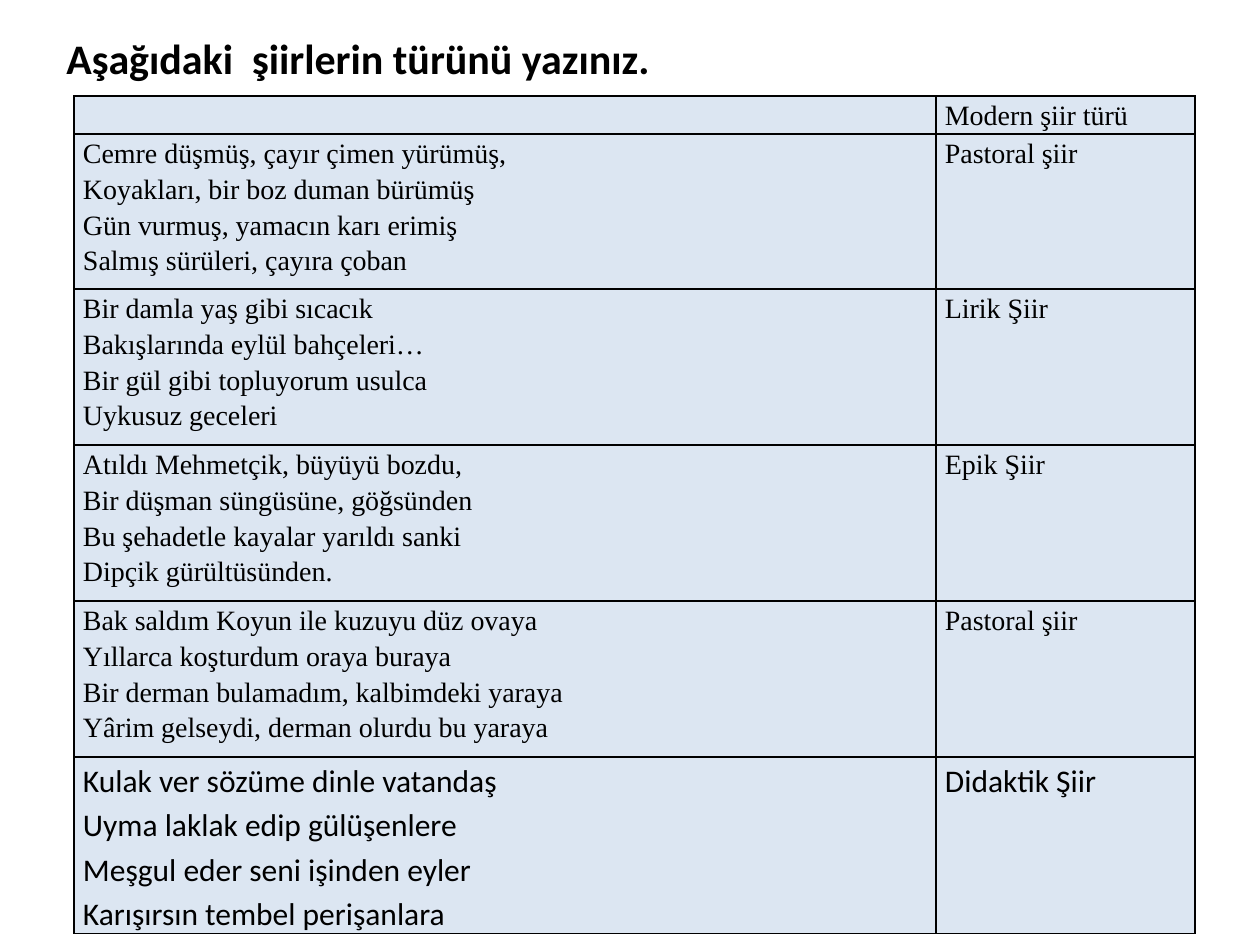
from lxml.etree import SubElement
from pptx import Presentation
from pptx.dml.color import RGBColor
from pptx.enum.text import MSO_AUTO_SIZE as AutoSize
from pptx.oxml import parse_xml
from pptx.oxml.ns import nsdecls, qn
from pptx.util import Pt

PX_PER_INCH = 126
COLORS = {"text": "000000", "border": "000000", "cell": "DCE6F2"}
SERIF = {"name": "Times New Roman", "size": Pt(16), "bold": False}
SANS = {"name": "Calibri", "size": Pt(18), "bold": False}
TITLE = {"name": "Calibri", "size": Pt(24), "bold": True}

COLUMN_WIDTHS = [862, 259]
# Each row: height, poem lines, poem type, font; a vertical tab breaks a line.
ROWS = [
    (38, [""], "Modern şiir türü", SERIF),
    (155, ["Cemre düşmüş, çayır çimen yürümüş,",
           "Koyakları, bir boz duman bürümüş",
           "Gün vurmuş, yamacın karı erimiş",
           "Salmış sürüleri, çayıra çoban"], "Pastoral şiir", SERIF),
    (156, ["Bir damla yaş gibi sıcacık",
           "Bakışlarında eylül bahçeleri…",
           "Bir gül gibi topluyorum usulca",
           "Uykusuz geceleri"], "Lirik Şiir", SERIF),
    (156, ["Atıldı Mehmetçik, büyüyü bozdu,",
           "Bir düşman süngüsüne, göğsünden",
           "Bu şehadetle kayalar yarıldı sanki",
           "Dipçik gürültüsünden."], "Epik Şiir", SERIF),
    (156, ["Bak saldım Koyun ile kuzuyu düz ovaya",
           "Yıllarca koşturdum oraya buraya",
           "Bir derman bulamadım, kalbimdeki yaraya",
           "Yârim gelseydi, derman olurdu bu yaraya"], "Pastoral şiir", SERIF),
    (159, ["Kulak ver sözüme dinle vatandaş\v"
           "Uyma laklak edip gülüşenlere\v"
           "Meşgul eder seni işinden eyler\v"
           "Karışırsın tembel perişanlara"], "Didaktik Şiir", SANS),
]


def px(value):
    return round(value * 914400 / PX_PER_INCH)


def set_all(target, values):
    for name, value in values.items():
        setattr(target, name, value)


class SlideBuilder:
    def __init__(self, slide):
        self.slide = slide

    def fill_text(self, frame, lines, font, line_spacing=None):
        for index, line in enumerate(lines):
            paragraph = frame.add_paragraph() if index else frame.paragraphs[0]
            paragraph.text = line
            paragraph.line_spacing = line_spacing
            for run in paragraph.runs:
                set_all(run.font, font)
                run.font.color.rgb = RGBColor.from_string(COLORS["text"])
            if not line:
                # The end mark's size sets the height of an empty line.
                SubElement(paragraph._p, qn("a:endParaRPr"),
                           sz=str(int(font["size"].pt * 100)))

    def text(self, left, top, width, height, line, font):
        box = self.slide.shapes.add_textbox(*map(px, (left, top, width, height)))
        set_all(box.text_frame, {"word_wrap": True,
                                 "auto_size": AutoSize.SHAPE_TO_FIT_TEXT})
        self.fill_text(box.text_frame, [line], font)

    def border(self, cell):
        properties = cell._tc.get_or_add_tcPr()
        for index, side in enumerate("LRTB"):
            properties.insert(index, parse_xml(
                f'<a:ln{side} {nsdecls("a")} w="{Pt(1)}"><a:solidFill>'
                f'<a:srgbClr val="{COLORS["border"]}"/></a:solidFill></a:ln{side}>'))

    def cell(self, cell, lines, font):
        set_all(cell, {"margin_left": px(9), "margin_right": px(9),
                       "margin_top": 0, "margin_bottom": 0})
        cell.fill.solid()
        cell.fill.fore_color.rgb = RGBColor.from_string(COLORS["cell"])
        self.border(cell)
        self.fill_text(cell.text_frame, lines, font, line_spacing=1.15)

    def table(self, left, top, widths, rows):
        height = sum(row[0] for row in rows)
        table = self.slide.shapes.add_table(
            len(rows), len(widths),
            *map(px, (left, top, sum(widths), height))).table
        set_all(table, {"first_row": False, "horz_banding": False})
        for column, width in zip(table.columns, widths):
            column.width = px(width)
        for index, (row_height, poem, kind, font) in enumerate(rows):
            table.rows[index].height = px(row_height)
            self.cell(table.cell(index, 0), poem, font)
            self.cell(table.cell(index, 1), [kind], font)


def main():
    presentation = Presentation()
    set_all(presentation, {"slide_width": px(1260), "slide_height": px(945)})
    slide = presentation.slides.add_slide(presentation.slide_layouts[6])
    builder = SlideBuilder(slide)
    builder.table(74, 96, COLUMN_WIDTHS, ROWS)
    builder.text(54, 26, 693, 63, "Aşağıdaki  şiirlerin türünü yazınız.", TITLE)
    presentation.save("out.pptx")


if __name__ == "__main__":
    main()
